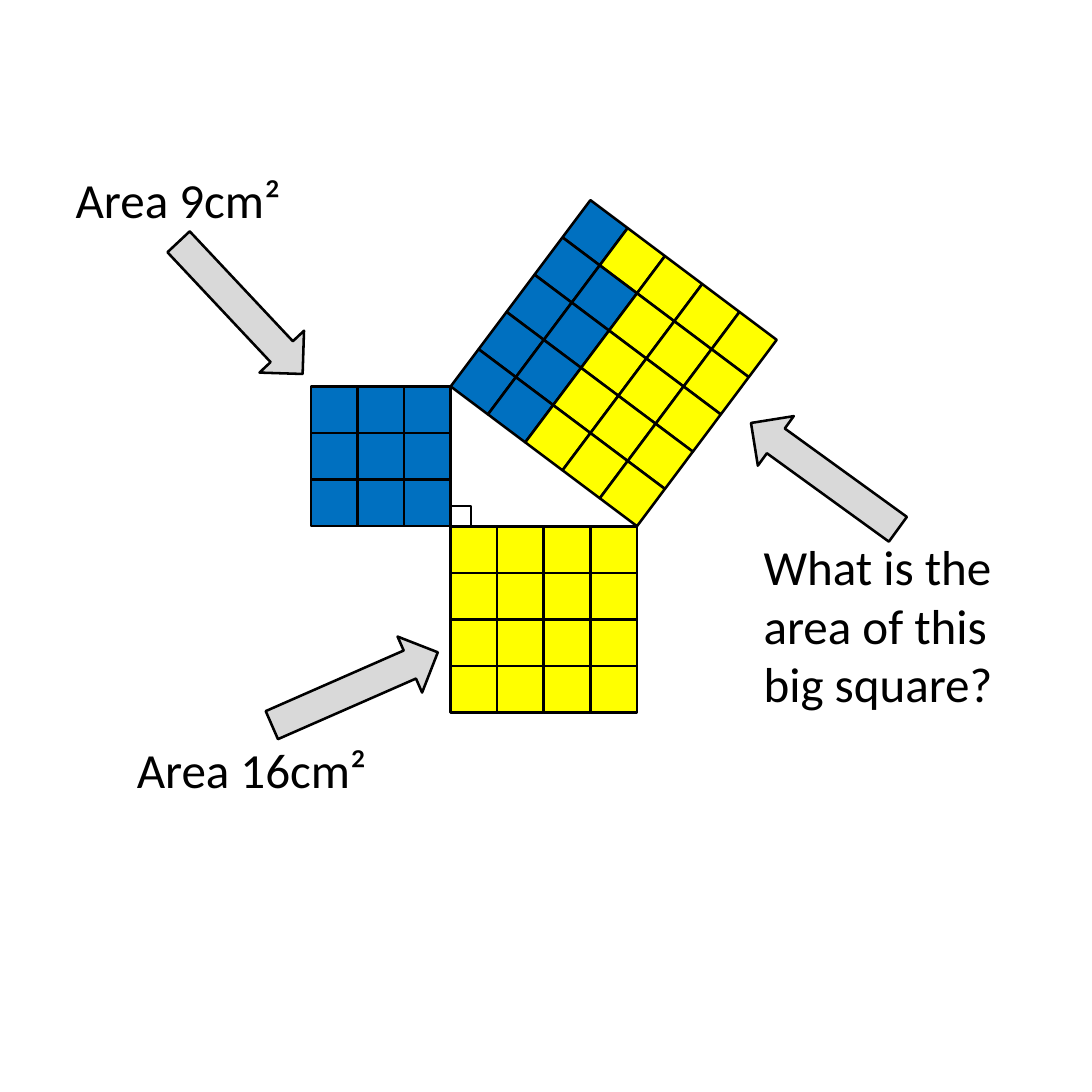
from math import atan2, cos, degrees, sin
from itertools import product

from pptx import Presentation
from pptx.dml.color import RGBColor
from pptx.enum.shapes import MSO_SHAPE
from pptx.enum.text import MSO_AUTO_SIZE
from pptx.util import Cm, Pt

RECTANGLE = MSO_SHAPE.RECTANGLE
RIGHT_ARROW = MSO_SHAPE.RIGHT_ARROW
FIT_SHAPE = MSO_AUTO_SIZE.SHAPE_TO_FIT_TEXT
COLORS = {"blue": "0070C0", "yellow": "FFFF00", "grey": "D9D9D9", "black": "000000"}

CELL = 0.64
SHORT, LONG, HYPOTENUSE = 3, 4, 5
RIGHT_ANGLE = 0.28

LABELS = [  # text, box, wraps
    ("Area 9cm²", (0.79, 2.21, 3.35, 1.07), False),
    ("Area 16cm²", (1.63, 10.03, 3.71, 1.07), False),
    ("What is the area of this big square?", (10.24, 7.24, 4.32, 2.72), True),
]
ARROWS = [  # box, rotation
    ((10.08, 6.12, 2.49, 0.84), 215.9),
    ((3.63, 9.04, 2.49, 0.84), 336.3),
    ((2.06, 3.81, 2.49, 0.84), 46.8),
]


def add_outlined(shapes, kind, box, color=None, rotation=0):
    shape = shapes.add_shape(kind, *map(Cm, box))
    shape.shadow.inherit = False
    shape.rotation = rotation
    if color:
        shape.fill.solid()
        shape.fill.fore_color.rgb = RGBColor.from_string(COLORS[color])
    else:
        shape.fill.background()
    shape.line.color.rgb = RGBColor.from_string(COLORS["black"])
    shape.line.width = Pt(1)


def add_square(slide, left, top, count, cell_color, angle=0):
    """Tile a square turned by angle (radians) about its top left corner."""
    group = slide.shapes.add_group_shape()
    for column, row in product(range(count), repeat=2):
        across, down = (column + 0.5) * CELL, (row + 0.5) * CELL
        center_x = left + across * cos(angle) - down * sin(angle)
        center_y = top + across * sin(angle) + down * cos(angle)
        box = (center_x - CELL / 2, center_y - CELL / 2, CELL, CELL)
        add_outlined(group.shapes, RECTANGLE, box, cell_color(column, row), degrees(angle))


def add_pythagoras(slide, corner_x, corner_y):
    """Draw the squares on the sides of a triangle with its right angle at the corner."""
    short, long = SHORT * CELL, LONG * CELL
    add_square(slide, corner_x - short, corner_y - short, SHORT, lambda column, row: "blue")
    add_square(slide, corner_x, corner_y, LONG, lambda column, row: "yellow")

    def big_square_color(column, row):
        return "blue" if column == 0 or (column == 1 and row > 0) else "yellow"

    add_square(slide, corner_x + short, corner_y - short - long, HYPOTENUSE,
               big_square_color, atan2(SHORT, LONG))
    add_outlined(slide.shapes, RECTANGLE,
                 (corner_x, corner_y - RIGHT_ANGLE, RIGHT_ANGLE, RIGHT_ANGLE))


def add_label(slide, text, box, wraps):
    frame = slide.shapes.add_textbox(*map(Cm, box)).text_frame
    frame.word_wrap = wraps
    frame.auto_size = FIT_SHAPE
    paragraph = frame.paragraphs[0]
    paragraph.text = text
    paragraph.font.name = "Calibri"
    paragraph.font.size = Pt(19.1)
    paragraph.font.color.rgb = RGBColor.from_string(COLORS["black"])


def main():
    presentation = Presentation()
    presentation.slide_width = presentation.slide_height = Cm(15)
    slide = presentation.slides.add_slide(presentation.slide_layouts[6])
    add_pythagoras(slide, 6.19, 7.23)
    for text, box, wraps in LABELS:
        add_label(slide, text, box, wraps)
    for box, rotation in ARROWS:
        add_outlined(slide.shapes, RIGHT_ARROW, box, "grey", rotation)
    presentation.save("out.pptx")


if __name__ == "__main__":
    main()
